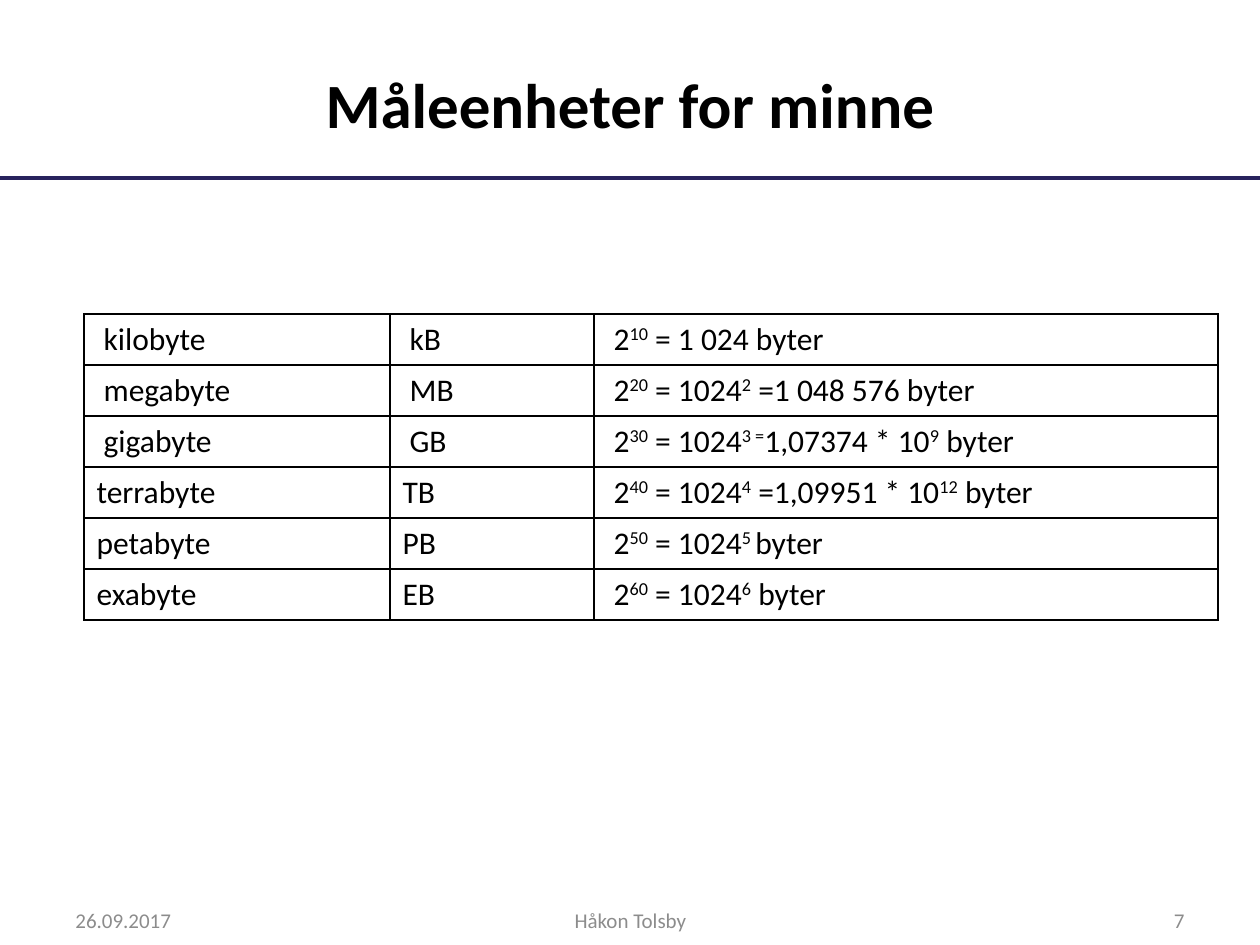
import lxml.etree
import pptx
import pptx.dml.color
import pptx.enum.shapes
import pptx.enum.text
import pptx.oxml.ns
import pptx.util

HUES = {"ink": "000000", "rule": "28235D", "foot": "8C8C8C", "back": "FFFFFF"}
ALIGN = pptx.enum.text.PP_ALIGN
MIDDLE = pptx.enum.text.MSO_ANCHOR.MIDDLE
UNITS = [
    (" kilobyte", " kB", " 2^10^ = 1 024 byter"),
    (" megabyte", " MB", " 2^20^ = 1024^2^ =1 048 576 byter"),
    (" gigabyte", " GB", " 2^30^ = 1024^3 =^1,07374 * 10^9^ byter"),
    ("terrabyte", "TB", " 2^40^ = 1024^4^ =1,09951 * 10^12^ byter"),
    ("petabyte", "PB", " 2^50^ = 1024^5 ^byter"),
    ("exabyte", "EB", " 2^60^ = 1024^6^ byter"),
]


def px(count):
    """Turn pixels into EMU."""
    return round(count * 914400 / 126)


def tint(name):
    """Return a named colour."""
    return pptx.dml.color.RGBColor.from_string(HUES[name])


def style(para, size, hue, bold=False, align=ALIGN.LEFT):
    """Set the font and alignment of a paragraph."""
    para.alignment = align
    font = para.font
    font.name, font.size, font.bold = "Calibri", pptx.util.Pt(size), bold
    font.color.rgb = tint(hue)


def label(slide, box, text, *look):
    """Place one line of text, centred vertically in its box."""
    frame = slide.shapes.add_textbox(*map(px, box)).text_frame
    frame.word_wrap = True
    frame.vertical_anchor = MIDDLE
    frame.text = text
    style(frame.paragraphs[0], *look)


def header(slide, box):
    """Draw the title and the rule beneath it."""
    left, top, width, height = box
    label(slide, (left + 63, top + 38, width - 126, 130),
          "Måleenheter for minne", 36, "ink", True, ALIGN.CENTER)
    base = px(top + height)
    line = slide.shapes.add_connector(
        pptx.enum.shapes.MSO_CONNECTOR.STRAIGHT,
        px(left), base, px(left + width), base)
    line.line.color.rgb = tint("rule")
    line.line.width = pptx.util.Pt(2)
    lxml.etree.SubElement(line._element.spPr, pptx.oxml.ns.qn("a:effectLst"))


def border(cell):
    """Give a cell thin lines on all four sides."""
    props = cell._tc.get_or_add_tcPr()
    for spot, side in enumerate("LRTB"):
        edge = lxml.etree.Element(pptx.oxml.ns.qn("a:ln" + side), w="12700")
        fill = lxml.etree.SubElement(edge, pptx.oxml.ns.qn("a:solidFill"))
        lxml.etree.SubElement(
            fill, pptx.oxml.ns.qn("a:srgbClr"), val=HUES["ink"])
        props.insert(spot, edge)


def write(cell, text):
    """Fill a cell, raising the parts between carets."""
    cell.vertical_anchor = MIDDLE
    cell.fill.solid()
    cell.fill.fore_color.rgb = tint("back")
    border(cell)
    para = cell.text_frame.paragraphs[0]
    style(para, 18, "ink")
    for spot, part in enumerate(text.split("^")):
        run = para.add_run()
        run.text = part
        if spot % 2:
            run._r.get_or_add_rPr().set("baseline", "30000")


def units(slide, box):
    """Build the table of memory units."""
    height = box[3] // len(UNITS)
    table = slide.shapes.add_table(len(UNITS), 3, *map(px, box)).table
    table.first_row = table.horz_banding = False
    for col, width in zip(table.columns, (306, 204, box[2] - 510)):
        col.width = px(width)
    for row, texts in zip(table.rows, UNITS):
        row.height = px(height)
        for cell, text in zip(row.cells, texts):
            write(cell, text)


def footer(slide, box):
    """Place the date, author and page number."""
    left, top, width, height = box
    parts = [
        (0, 294, "26.09.2017", ALIGN.LEFT),
        (368, 399, "Håkon Tolsby", ALIGN.CENTER),
        (width - 294, 294, "7", ALIGN.RIGHT),
    ]
    for shift, wide, text, align in parts:
        label(slide, (left + shift, top, wide, height),
              text, 12, "foot", False, align)


def main():
    """Build and save the slide."""
    deck = pptx.Presentation()
    deck.slide_width, deck.slide_height = px(1260), px(945)
    slide = deck.slides.add_slide(deck.slide_layouts[6])
    header(slide, (0, 0, 1260, 178))
    units(slide, (84, 314, 1134, 306))
    footer(slide, (63, 895, 1134, 50))
    deck.save("out.pptx")


if __name__ == "__main__":
    main()
